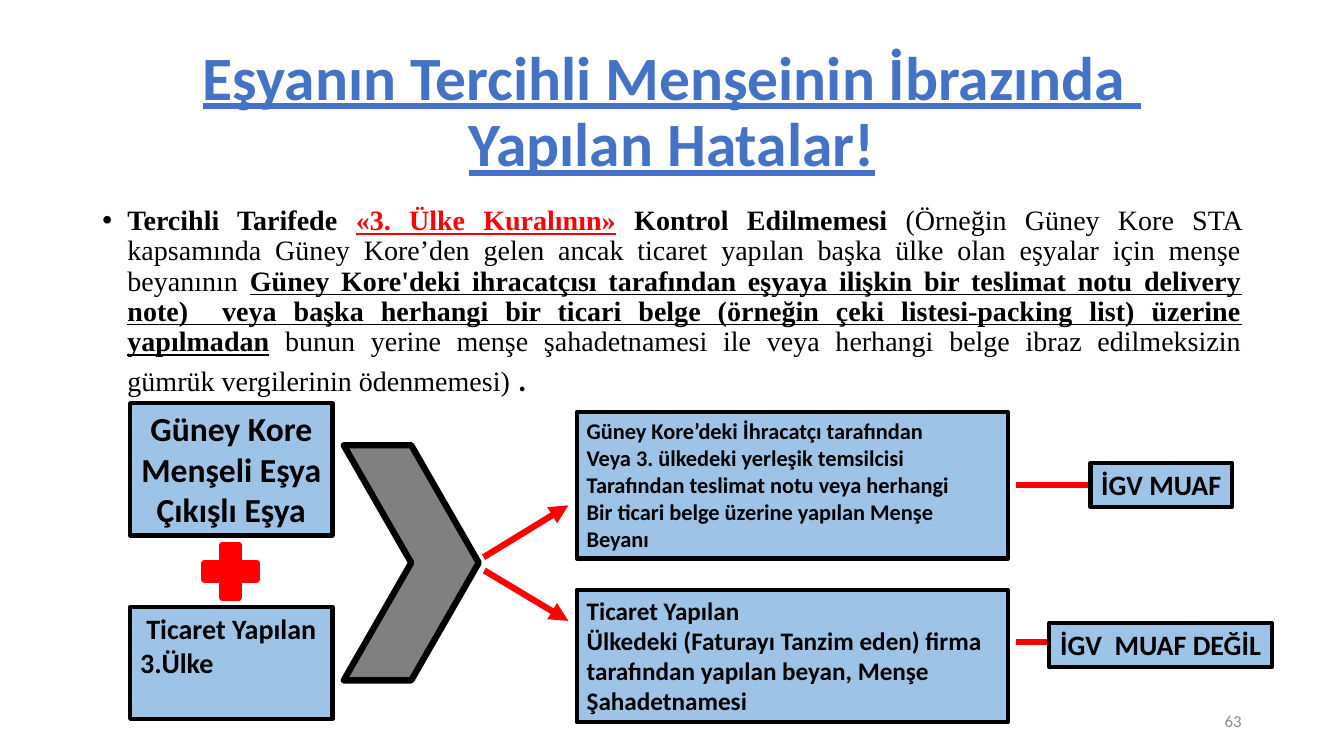
from lxml import etree
from pptx import Presentation
from pptx.dml.color import RGBColor
from pptx.enum.shapes import MSO_CONNECTOR, MSO_SHAPE
from pptx.enum.text import MSO_ANCHOR, PP_ALIGN
from pptx.oxml.ns import qn
from pptx.util import Pt

BLACK = RGBColor(0x00, 0x00, 0x00)
WHITE = RGBColor(0xFF, 0xFF, 0xFF)
RED = RGBColor(0xFF, 0x00, 0x00)
GRAY = RGBColor(0x80, 0x80, 0x80)
NUMBER_GRAY = RGBColor(0x8C, 0x8C, 0x8C)
TITLE_BLUE = RGBColor(0x44, 0x72, 0xC4)
BOX_BLUE = RGBColor(0x9D, 0xC3, 0xE6)

LEFT, CENTER, RIGHT = PP_ALIGN.LEFT, PP_ALIGN.CENTER, PP_ALIGN.RIGHT
JUSTIFY = PP_ALIGN.JUSTIFY
TOP, MIDDLE = MSO_ANCHOR.TOP, MSO_ANCHOR.MIDDLE
RECTANGLE, CHEVRON = MSO_SHAPE.RECTANGLE, MSO_SHAPE.CHEVRON
PLUS = MSO_SHAPE.MATH_PLUS
STRAIGHT = MSO_CONNECTOR.STRAIGHT

HEADING_FONT = "Calibri"
RULE_FONT = "Times New Roman"

# Text, bold, underlined, colour
RULE_RUNS = [
    ("Tercihli Tarifede ", True, False, BLACK),
    ("«3. Ülke Kuralının»", True, True, RED),
    (" Kontrol Edilmemesi ", True, False, BLACK),
    ("(Örneğin Güney Kore STA kapsamında Güney Kore’den gelen ancak ticaret "
     "yapılan başka ülke olan eşyalar için menşe beyanının ", False, False, BLACK),
    ("Güney Kore'deki ihracatçısı tarafından eşyaya ilişkin bir teslimat notu "
     "delivery note)  veya başka herhangi bir ticari belge (örneğin çeki "
     "listesi-packing list) üzerine yapılmadan", True, True, BLACK),
    (" bunun yerine menşe şahadetnamesi ile veya herhangi belge ibraz "
     "edilmeksizin gümrük vergilerinin ödenmemesi) ", False, False, BLACK),
]

# Left, top, width, height, text size, wrap, (line, alignment) pairs
BOXES = [
    (93, 288, 144.5, 94.5, 24, False,
     [("Güney Kore", CENTER), ("Menşeli Eşya", CENTER), ("Çıkışlı Eşya", CENTER)]),
    (93, 433.5, 144.5, 80, 20, True,
     [("Ticaret Yapılan", CENTER), ("3.Ülke", LEFT)]),
    (412, 294.5, 308, 104.5, 16, True,
     [("Güney Kore’deki İhracatçı tarafından", LEFT),
      ("Veya 3. ülkedeki yerleşik temsilcisi", LEFT),
      ("Tarafından teslimat notu veya herhangi", LEFT),
      ("Bir ticari belge üzerine yapılan Menşe Beyanı", LEFT)]),
    (412, 421.5, 308, 94.5, 18, True,
     [("Ticaret Yapılan", LEFT),
      ("Ülkedeki (Faturayı Tanzim eden) firma tarafından yapılan beyan, "
       "Menşe Şahadetnamesi", LEFT)]),
    (779, 330.5, 101, 31.5, 20, False, [("İGV MUAF", CENTER)]),
    (749.5, 445, 159, 31.5, 20, False, [("İGV  MUAF DEĞİL", CENTER)]),
]

ARROWS = [
    (345.5, 398, 406, 361),
    (346, 407.5, 406, 443.5),
    (726, 346.5, 801.5, 346.5),
    (726, 458.5, 801.5, 458.5),
]


def style_font(font, name, size, color, bold=False, underline=False):
    font.name = name
    font.size = Pt(size)
    font.color.rgb = color
    font.bold = bold
    font.underline = underline


def add_text_frame(slide, left, top, width, height, anchor):
    box = slide.shapes.add_textbox(Pt(left), Pt(top), Pt(width), Pt(height))
    frame = box.text_frame
    frame.word_wrap = True
    frame.vertical_anchor = anchor
    return frame


def add_title(slide):
    title = add_text_frame(slide, 66, 29, 828, 104, MIDDLE).paragraphs[0]
    title.text = "Eşyanın Tercihli Menşeinin İbrazında \vYapılan Hatalar!"
    title.alignment = CENTER
    title.line_spacing = 0.9
    style_font(title.font, HEADING_FONT, 44, TITLE_BLUE, True, True)


def add_bullet(paragraph, indent):
    """Give the paragraph a round bullet hanging in its indent."""
    properties = paragraph._p.get_or_add_pPr()
    properties.set("marL", str(Pt(indent)))
    properties.set("indent", str(-Pt(indent)))
    etree.SubElement(properties, qn("a:buFont")).set("typeface", "Arial")
    etree.SubElement(properties, qn("a:buChar")).set("char", "•")


def add_rule(slide):
    rule = add_text_frame(slide, 66, 144, 828, 343, TOP).paragraphs[0]
    rule.alignment = JUSTIFY
    rule.line_spacing = 0.9
    rule.space_before = Pt(10)
    add_bullet(rule, 18)
    for text, bold, underline, color in RULE_RUNS:
        run = rule.add_run()
        run.text = text
        style_font(run.font, RULE_FONT, 20, color, bold, underline)
    full_stop = rule.add_run()
    full_stop.text = ". "
    style_font(full_stop.font, HEADING_FONT, 28, BLACK)


def add_filled_shape(slide, kind, left, top, width, height, fill, line, weight):
    shape = slide.shapes.add_shape(kind, Pt(left), Pt(top), Pt(width), Pt(height))
    shape.shadow.inherit = False
    shape.fill.solid()
    shape.fill.fore_color.rgb = fill
    shape.line.color.rgb = line
    shape.line.width = Pt(weight)
    return shape


def add_box(slide, left, top, width, height, size, wrap, lines):
    box = add_filled_shape(slide, RECTANGLE, left, top, width, height,
                           BOX_BLUE, BLACK, 3)
    frame = box.text_frame
    frame.word_wrap = wrap
    frame.vertical_anchor = TOP
    frame.text = "\n".join(text for text, _ in lines)
    for paragraph, (_, alignment) in zip(frame.paragraphs, lines):
        paragraph.alignment = alignment
        style_font(paragraph.font, HEADING_FONT, size, BLACK, True)


def add_arrow(slide, start_x, start_y, end_x, end_y):
    arrow = slide.shapes.add_connector(
        STRAIGHT, Pt(start_x), Pt(start_y), Pt(end_x), Pt(end_y))
    arrow.line.color.rgb = RED
    arrow.line.width = Pt(4.5)
    etree.SubElement(arrow.line._get_or_add_ln(), qn("a:tailEnd")).set("type", "triangle")
    etree.SubElement(arrow._element.spPr, qn("a:effectLst"))


def add_slide_number(slide):
    number = add_text_frame(slide, 678, 500.5, 216, 28.5, MIDDLE).paragraphs[0]
    number.text = "63"
    number.alignment = RIGHT
    style_font(number.font, HEADING_FONT, 12, NUMBER_GRAY)


def main():
    presentation = Presentation()
    presentation.slide_width = Pt(960)
    presentation.slide_height = Pt(540)
    slide = presentation.slides.add_slide(presentation.slide_layouts[6])
    slide.background.fill.solid()
    slide.background.fill.fore_color.rgb = WHITE

    add_title(slide)
    add_rule(slide)
    add_filled_shape(slide, PLUS, 139.5, 382.5, 50.5, 51, RED, RED, 4.5)
    add_filled_shape(slide, CHEVRON, 245.5, 318, 96.5, 168, GRAY, BLACK, 4.5)
    for arrow in ARROWS:
        add_arrow(slide, *arrow)
    for box in BOXES:
        add_box(slide, *box)
    add_slide_number(slide)
    presentation.save("out.pptx")


if __name__ == "__main__":
    main()
